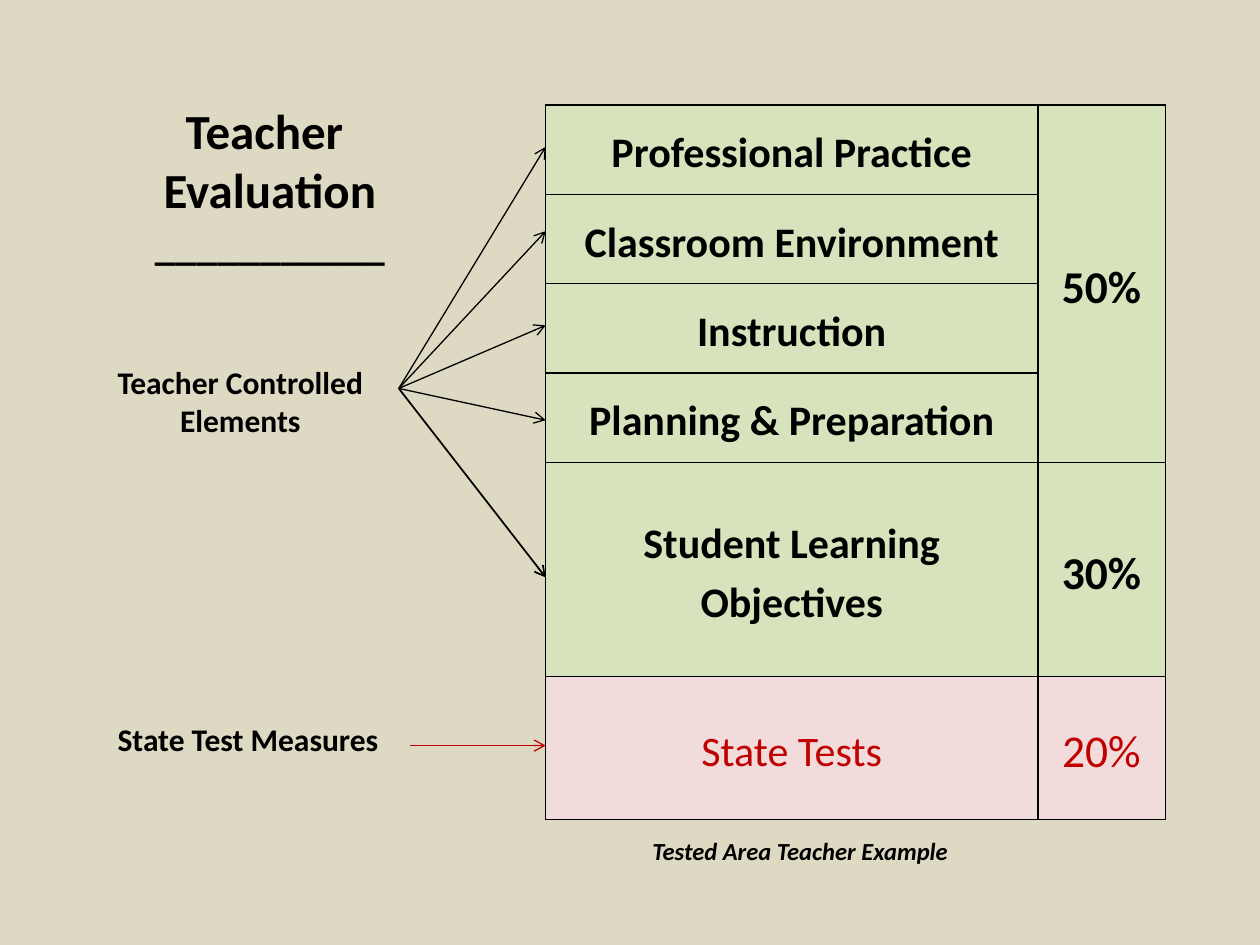
from lxml.etree import SubElement
from pptx import Presentation
from pptx.dml.color import RGBColor
from pptx.enum.shapes import MSO_CONNECTOR
from pptx.enum.text import MSO_ANCHOR as Anchor, MSO_AUTO_SIZE as AutoSize, PP_ALIGN as Align
from pptx.oxml import parse_xml
from pptx.oxml.ns import nsdecls, qn
from pptx.util import Cm, Pt

COLORS = {"bg": "DDD9C3", "green": "D6E3BC", "pink": "F2DBDB",
          "black": "000000", "red": "C00000"}
FONT = "Calibri"

TITLE = [("Teacher ", 28, Align.CENTER), ("Evaluation", 28, Align.CENTER),
         ("___________", 24, Align.CENTER)]
LABELS = [
    ((2.12, 7.2, 5.64, 1.8), False,
     [("Teacher Controlled", 18, Align.LEFT), ("Elements", 18, Align.CENTER)]),
    ((2.12, 14.4, 5.82, 1.02), False, [("State Test Measures", 18, Align.LEFT)]),
    ((12.9, 16.72, 6.5, 0.86), True, [("Tested Area Teacher Example", 14, Align.LEFT)]),
]
ROWS = [
    ("Professional Practice", "50%", 1.8),
    ("Classroom Environment", "", 1.8),
    ("Instruction", "", 1.8),
    ("Planning & Preparation", "", 1.8),
    ("Student Learning Objectives", "30%", 4.32),
    ("State Tests", "20%", 2.88),
]
TABLE_LEFT, TABLE_TOP = 11, 2.12
COL_WIDTHS = (9.92, 2.57)
COL_SIZES = (24, 26)
PRACTICE_ROWS = 4
HUB = (8.04, 7.83)
FAN = [(2.96, 0.75), (4.66, 0.75), (6.56, 0.75), (8.47, 0.75), (11.64, 1)]
ARROWS = [(HUB, y, "black", width) for y, width in FAN]
ARROWS.append(((8.26, 15.03), 15.03, "red", 0.75))


def rgb(name):
    """Return the named colour."""
    return RGBColor.from_string(COLORS[name])


def style(p, size, align, color="black", bold=True, italic=False):
    """Format a paragraph and its runs."""
    p.alignment = align
    for r in p.runs:
        r.font.name, r.font.size = FONT, Pt(size)
        r.font.bold, r.font.italic = bold, italic
        r.font.color.rgb = rgb(color)


def write(tf, lines, italic=False):
    """Fill a text frame with styled lines."""
    tf.text = "\n".join(text for text, _, _ in lines)
    tf.word_wrap = False
    tf.auto_size = AutoSize.SHAPE_TO_FIT_TEXT
    tf.vertical_anchor = Anchor.TOP
    for p, (_, size, align) in zip(tf.paragraphs, lines):
        style(p, size, align, italic=italic)


def add_borders(cell):
    """Draw a thin black line on each side of a cell."""
    tcPr = cell._tc.get_or_add_tcPr()
    for i, side in enumerate("LRTB"):
        tcPr.insert(i, parse_xml(
            f'<a:ln{side} {nsdecls("a")} w="{Pt(1)}"><a:solidFill>'
            f'<a:srgbClr val="{COLORS["black"]}"/></a:solidFill></a:ln{side}>'))


def add_weights(s):
    """Add the table of evaluation elements and their weights."""
    heights = [row[2] for row in ROWS]
    table = s.shapes.add_table(
        len(ROWS), len(COL_WIDTHS), Cm(TABLE_LEFT), Cm(TABLE_TOP),
        Cm(sum(COL_WIDTHS)), Cm(sum(heights))).table
    table.first_row = table.horz_banding = False
    for col, width in zip(table.columns, COL_WIDTHS):
        col.width = Cm(width)
    for i, (element, weight, height) in enumerate(ROWS):
        table.rows[i].height = Cm(height)
        tested = i == len(ROWS) - 1
        for j, text in enumerate((element, weight)):
            cell = table.cell(i, j)
            cell.text = text
            cell.vertical_anchor = Anchor.MIDDLE
            cell.margin_left = cell.margin_right = Cm(0.18)
            cell.margin_top = cell.margin_bottom = 0
            cell.fill.solid()
            cell.fill.fore_color.rgb = rgb("pink" if tested else "green")
            add_borders(cell)
            p = cell.text_frame.paragraphs[0]
            p.line_spacing = 1.15
            style(p, COL_SIZES[j], Align.CENTER,
                  "red" if tested else "black", not tested)
    table.cell(0, 1).merge(table.cell(PRACTICE_ROWS - 1, 1))


def add_arrow(s, start, y, color, width):
    """Add an arrow from a point to the left edge of the table."""
    line = s.shapes.add_connector(
        MSO_CONNECTOR.STRAIGHT, Cm(start[0]), Cm(start[1]), Cm(TABLE_LEFT), Cm(y))
    line.line.color.rgb = rgb(color)
    line.line.width = Pt(width)
    SubElement(line.line._get_or_add_ln(), qn("a:tailEnd"), type="arrow")
    SubElement(line._element.spPr, qn("a:effectLst"))


def main():
    """Build the teacher evaluation slide."""
    prs = Presentation()
    prs.slide_width, prs.slide_height = Cm(25.4), Cm(19.05)
    s = prs.slides.add_slide(prs.slide_layouts[5])
    s.background.fill.solid()
    s.background.fill.fore_color.rgb = rgb("bg")
    add_weights(s)
    title = s.shapes.title
    title.left, title.top, title.width, title.height = map(Cm, (2.84, 1.9, 5.2, 3.68))
    write(title.text_frame, TITLE)
    for box, italic, lines in LABELS:
        write(s.shapes.add_textbox(*map(Cm, box)).text_frame, lines, italic)
    for arrow in ARROWS:
        add_arrow(s, *arrow)
    prs.save("out.pptx")


if __name__ == "__main__":
    main()
